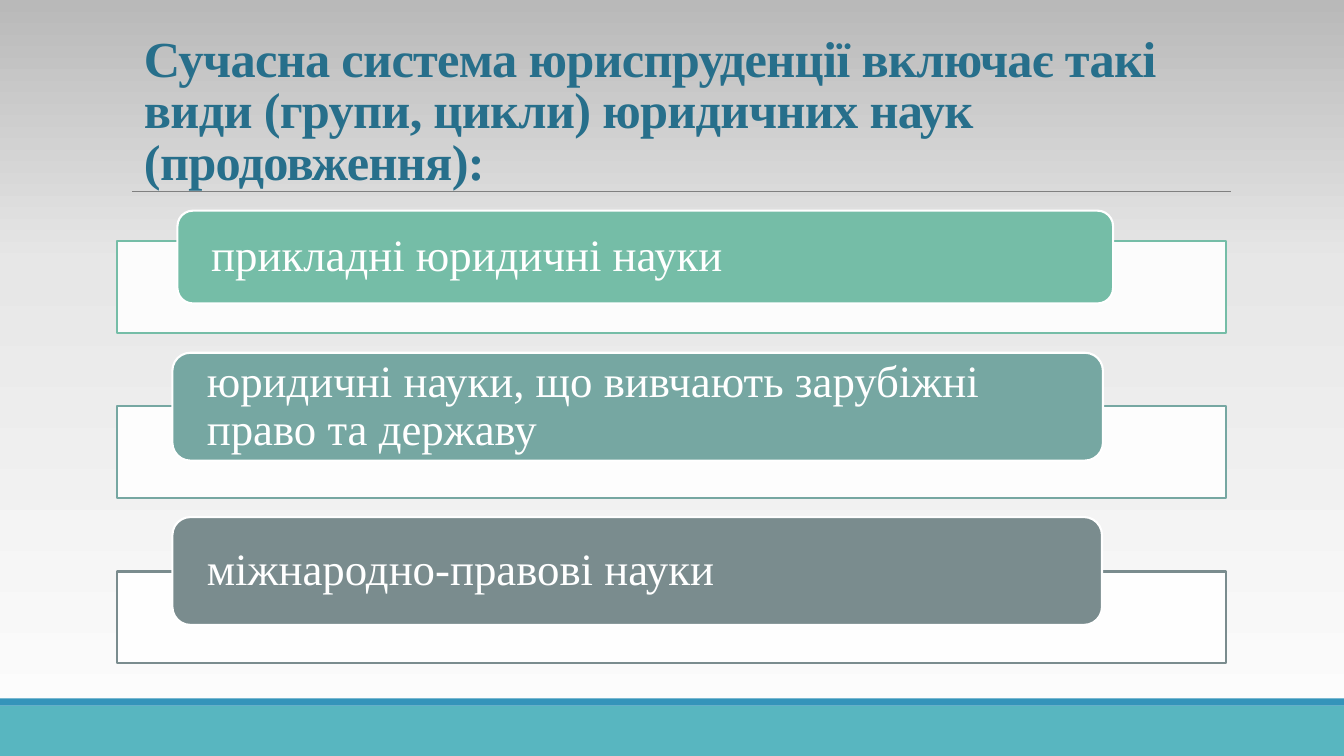
import copy
import pptx
import pptx.util
import pptx.dml.color
import pptx.enum.shapes
import pptx.enum.text
import pptx.oxml.ns
import pptx.oxml.xmlchemy

Inches = pptx.util.Inches
Pt = pptx.util.Pt
SHAPE = pptx.enum.shapes.MSO_SHAPE
ANCHOR = pptx.enum.text.MSO_ANCHOR
qn = pptx.oxml.ns.qn
make = pptx.oxml.xmlchemy.OxmlElement

FONT = "Times New Roman"
COLORS = {
    "white": "FFFFFF", "title": "276F8B", "rule": "808080",
    "band": "58B6C0", "stripe": "3494BA",
    "green": "75BDA7", "teal": "76A7A2", "gray": "7A8C8E",
    "pale": "FEFEFE", "mist": "E7E7E7", "ash": "B9B9B9",
}
STOPS = [(0, "pale"), (0.65, "mist"), (1, "ash")]
TITLE = "Сучасна система юриспруденції включає такі види (групи, цикли) юридичних наук (продовження):"
ITEMS = [
    ("прикладні юридичні науки", "green", (1.76, 2.09, 9.28, 0.92)),
    ("юридичні науки, що вивчають зарубіжні право та державу", "teal", (1.71, 3.5, 9.23, 1.07)),
    ("міжнародно-правові науки", "gray", (1.71, 5.13, 9.22, 1.07)),
]
BANDS = [("band", (0, 7, 13.33, 0.5)), ("stripe", (0, 6.93, 13.33, 0.07))]
LEFT, TOP, WIDTH, HEIGHT, STEP = 1.16, 2.39, 11, 0.91, 1.64


def rgb(name):
    return pptx.dml.color.RGBColor.from_string(COLORS[name])


def add_box(slide, kind, place, fill, line=None):
    box = slide.shapes.add_shape(kind, *map(Inches, place))
    box.shadow.inherit = False
    box.fill.solid()
    box.fill.fore_color.rgb = rgb(fill)
    if line:
        box.line.color.rgb = rgb(line)
        box.line.width = Pt(1.5)
    else:
        box.line.fill.background()
    return box


def add_text(shape, text, size, color, anchor, space, bold=False):
    frame = shape.text_frame
    frame.word_wrap = True
    frame.vertical_anchor = anchor
    para = frame.paragraphs[0]
    para.alignment = pptx.enum.text.PP_ALIGN.LEFT
    para.line_spacing = space
    run = para.add_run()
    run.text = text
    run.font.name = FONT
    run.font.size = Pt(size)
    run.font.bold = bold
    run.font.color.rgb = rgb(color)
    return run


def paint_back(slide):
    fill = slide.background.fill
    fill.gradient()
    fill.gradient_angle = 90
    stops = slide._element.find(".//" + qn("a:gsLst"))
    stops.append(copy.deepcopy(stops[0]))
    for stop, (place, color) in zip(fill.gradient_stops, STOPS):
        stop.position = place
        stop.color.rgb = rgb(color)


def add_head(slide):
    rule = slide.shapes.add_connector(
        pptx.enum.shapes.MSO_CONNECTOR.STRAIGHT, *map(Inches, (1.31, 1.9, 12.21, 1.9)))
    rule.line.color.rgb = rgb("rule")
    rule.line.width = Pt(0.5)
    rule._element.spPr.append(make("a:effectLst"))
    head = slide.shapes.add_textbox(*map(Inches, (1.33, 0.35, 11, 1.59)))
    run = add_text(head, TITLE, 36, "title", ANCHOR.BOTTOM, 0.85, True)
    run._r.get_or_add_rPr().set("spc", "-50")


def add_item(slide, row, text, color, place):
    frame = (LEFT, TOP + row * STEP, WIDTH, HEIGHT)
    back = add_box(slide, SHAPE.RECTANGLE, frame, "white", color)
    alpha = make("a:alpha")
    alpha.set("val", "90000")
    back._element.spPr.find(qn("a:solidFill"))[0].append(alpha)
    label = add_box(slide, SHAPE.ROUNDED_RECTANGLE, place, color, "white")
    inset = label.text_frame
    inset.margin_left = inset.margin_right = Inches(0.29)
    inset.margin_top = inset.margin_bottom = 0
    add_text(label, text, 32, "white", ANCHOR.MIDDLE, 0.9)


def main():
    """Build the slide on the groups of legal sciences."""
    deck = pptx.Presentation()
    deck.slide_width = Inches(13.33)
    deck.slide_height = Inches(7.5)
    slide = deck.slides.add_slide(deck.slide_layouts[6])
    paint_back(slide)
    for color, place in BANDS:
        add_box(slide, SHAPE.RECTANGLE, place, color)
    add_head(slide)
    for row, item in enumerate(ITEMS):
        add_item(slide, row, *item)
    deck.save("out.pptx")


if __name__ == "__main__":
    main()
